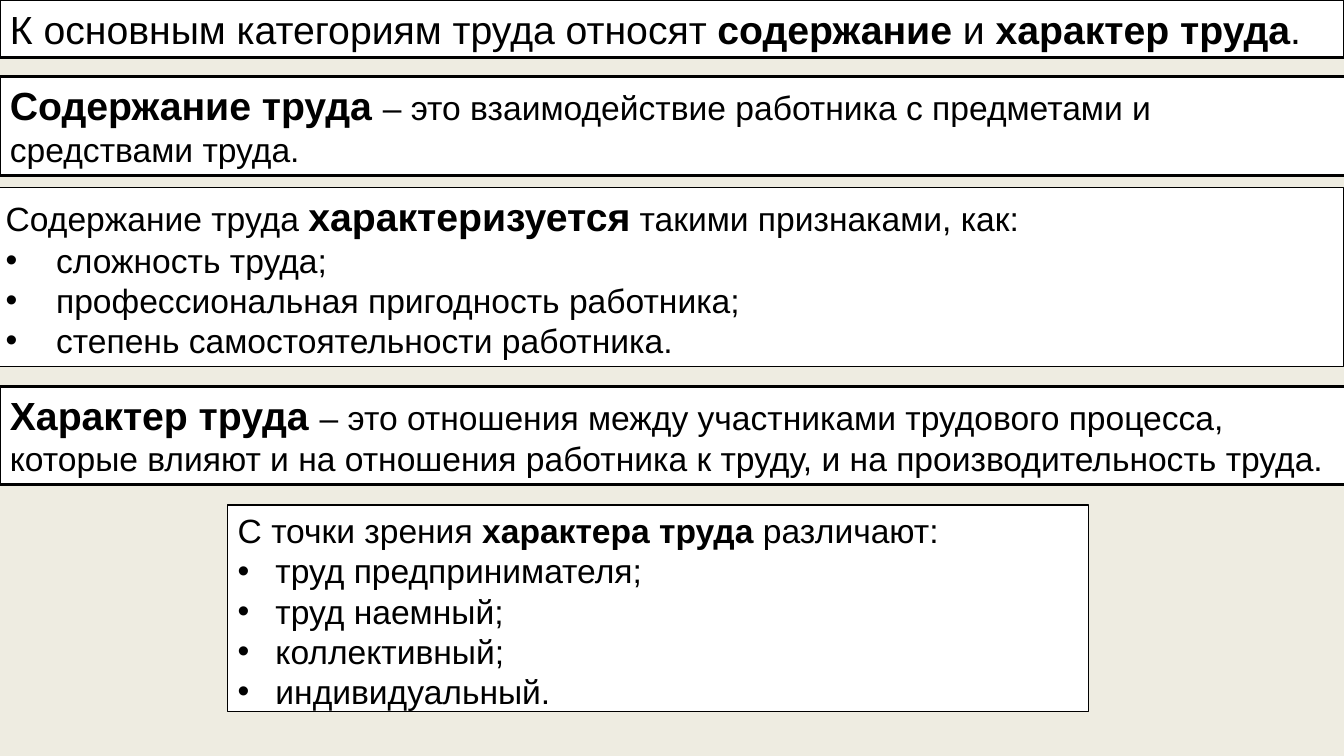
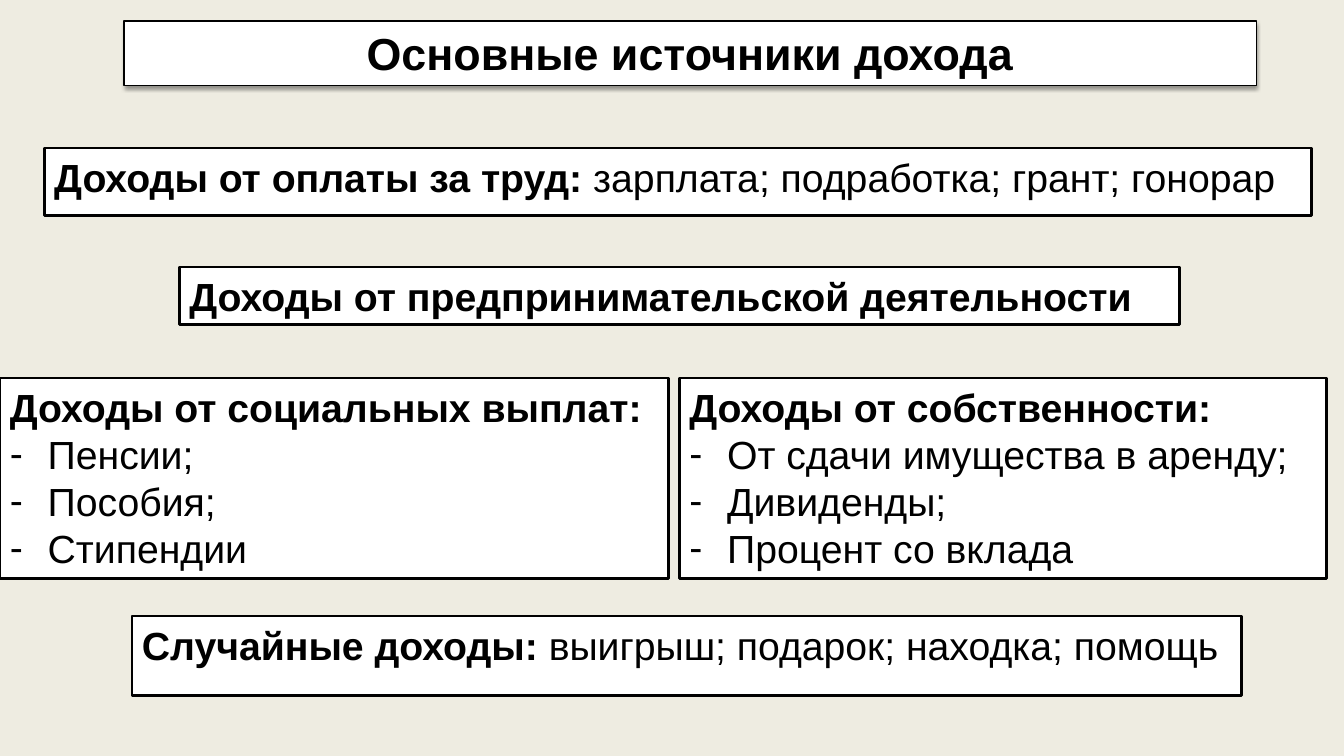
from dataclasses import dataclass

from lxml import etree
from pptx import Presentation
from pptx.dml.color import RGBColor
from pptx.enum import shapes, text
from pptx.oxml import ns
from pptx.util import Pt


@dataclass(frozen=True)
class Theme:
    back: str = "EEECE1"
    panel: str = "FFFFFF"
    ink: str = "000000"
    font: str = "Arial"
    body: int = 24
    lead: int = 28
    title: int = 32
    thin: float = 0.75
    thick: float = 2


T = Theme()
WIDE, HIGH = 960, 540


def color(code):
    return RGBColor.from_string(code)


# Shared parts
def page(deck):
    slide = deck.slides.add_slide(deck.slide_layouts[6])
    slide.background.fill.solid()
    slide.background.fill.fore_color.rgb = color(T.back)
    return slide


def write(para, runs):
    """Each run is (text, size, bold)."""
    para.alignment = text.PP_ALIGN.LEFT
    for words, size, bold in runs:
        run = para.add_run()
        run.text = words
        font = run.font
        font.name, font.size, font.bold = T.font, Pt(size), bold
        font.color.rgb = color(T.ink)


def panel(slide, box, runs, line=T.thick):
    shape = slide.shapes.add_shape(shapes.MSO_SHAPE.RECTANGLE, *map(Pt, box))
    shape.shadow.inherit = False
    shape.fill.solid()
    shape.fill.fore_color.rgb = color(T.panel)
    shape.line.color.rgb = color(T.ink)
    shape.line.width = Pt(line)
    frame = shape.text_frame
    frame.word_wrap = True
    frame.vertical_anchor = text.MSO_ANCHOR.TOP
    write(frame.paragraphs[0], runs)
    return shape


def bullet(para, mark, indent):
    props = para._p.get_or_add_pPr()
    props.set("marL", str(Pt(indent)))
    props.set("indent", str(-Pt(indent)))
    font = etree.SubElement(props, ns.qn("a:buFont"))
    font.set("typeface", T.font)
    etree.SubElement(props, ns.qn("a:buChar")).set("char", mark)


def listing(slide, box, runs, items, size, mark, indent=27, line=T.thick):
    frame = panel(slide, box, runs, line).text_frame
    for item in items:
        para = frame.add_paragraph()
        write(para, [(item, size, False)])
        bullet(para, mark, indent)


def heading(slide, box, words):
    shape = panel(slide, box, [(words, T.title, True)], T.thin)
    shape.text_frame.paragraphs[0].alignment = text.PP_ALIGN.CENTER
    # Soft shadow straight below
    effects = shape._element.spPr.find(ns.qn("a:effectLst"))
    shade = etree.SubElement(
        effects, ns.qn("a:outerShdw"), blurRad=str(Pt(3.1)),
        dist=str(Pt(1.6)), dir="5400000", rotWithShape="0")
    tone = etree.SubElement(shade, ns.qn("a:srgbClr"), val=T.ink)
    etree.SubElement(tone, ns.qn("a:alpha"), val="38000")


def term(slide, box, name, rest, size):
    panel(slide, box, [(name, T.lead, True), (rest, size, False)])


# Slide 1: content and character of labour
def labour(deck):
    slide = page(deck)
    listing(slide, (-3, 134, 963, 128),
            [("Содержание труда ", T.body, False),
             ("характеризуется", T.lead, True),
             (" такими признаками, как:", T.body, False)],
            ["сложность труда;", "профессиональная пригодность работника;",
             "степень самостоятельности работника."],
            T.body, "•", 36, T.thin)
    term(slide, (0, 54.7, 962, 70.5), "Содержание труда ",
         "– это взаимодействие работника с предметами и средствами труда.",
         T.body)
    panel(slide, (0, 0, WIDE, 41),
          [("К основным категориям труда относят ", T.lead, False),
           ("содержание ", T.lead, True), ("и ", T.lead, False),
           ("характер труда", T.lead, True), (".", T.lead, False)])
    term(slide, (0, 275.8, 962.6, 70.5), "Характер труда ",
         "– это отношения между участниками трудового процесса, "
         "которые влияют и на отношения работника к труду, "
         "и на производительность труда.", T.body)
    listing(slide, (162.7, 360.7, 615, 147.6),
            [("С точки зрения ", T.body, False),
             ("характера труда ", T.body, True),
             ("различают:", T.body, False)],
            ["труд предпринимателя;", "труд наемный;", "коллективный;",
             "индивидуальный."],
            T.body, "•", line=T.thin)


# Slide 2: sources of income
def income(deck):
    slide = page(deck)
    heading(slide, (88.6, 15, 808.6, 46), "Основные источники дохода")
    term(slide, (94.3, 440, 792.7, 57), "Случайные доходы: ",
         "выигрыш; подарок; находка; помощь", T.lead)
    term(slide, (31.7, 105.8, 905, 48.2), "Доходы от оплаты за труд: ",
         "зарплата; подработка; грант; гонорар", T.lead)
    panel(slide, (128.2, 190.8, 714.2, 41),
          [("Доходы от предпринимательской деятельности", T.lead, True)])
    # Pair of lists side by side
    pair = [
        (0, 477.4, "Доходы от социальных выплат:",
         ["Пенсии;", "Пособия;", "Стипендии"]),
        (485.3, 462.2, "Доходы от собственности:",
         ["От сдачи имущества в аренду;", "Дивиденды;",
          "Процент со вклада"]),
    ]
    for left, width, name, items in pair:
        listing(slide, (left, 270, width, 143.3), [(name, T.lead, True)],
                items, T.lead, "-")


def main():
    deck = Presentation()
    deck.slide_width, deck.slide_height = Pt(WIDE), Pt(HIGH)
    labour(deck)
    income(deck)
    deck.save("out.pptx")


if __name__ == "__main__":
    main()
